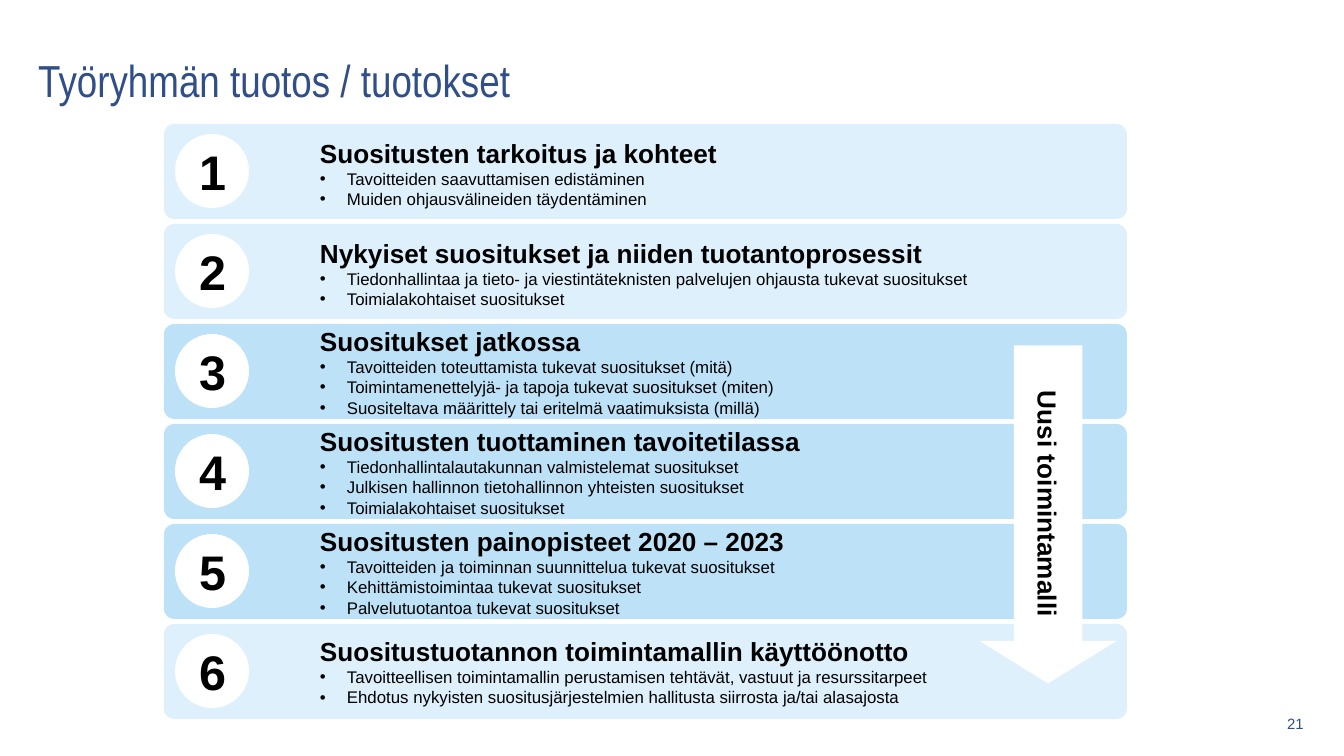
from lxml.etree import SubElement
from pptx import Presentation
from pptx.dml.color import RGBColor
from pptx.enum.shapes import MSO_SHAPE as Shape
from pptx.enum.text import MSO_ANCHOR as Anchor, PP_ALIGN as Align
from pptx.oxml.ns import qn
from pptx.util import Emu, Pt

SCALE = 914400 / 134.4  # EMU in one px
COLORS = {"title": "304E88", "text": "000000", "white": "FFFFFF",
          "pale": "DEF0FB", "strong": "BDE1F7"}
FORMATS = {
    "title": {"name": "Arial Narrow", "size": Pt(24), "bold": False},
    "page": {"name": "Arial", "size": Pt(8), "bold": False},
    "number": {"name": "Arial", "size": Pt(26), "bold": True},
    "heading": {"name": "Arial", "size": Pt(14), "bold": True},
    "bullet": {"name": "Arial", "size": Pt(9), "bold": False},
}


def px(*lengths):
    return [Emu(round(length * SCALE)) for length in lengths]


def write(paragraph, text, style, align=Align.LEFT, color="text"):
    paragraph.alignment = align
    run = paragraph.add_run()
    run.text = text
    for attribute, value in FORMATS[style].items():
        setattr(run.font, attribute, value)
    run.font.color.rgb = RGBColor.from_string(COLORS[color])


presentation = Presentation()
presentation.slide_width, presentation.slide_height = px(1344, 756)
slide = presentation.slides.add_slide(presentation.slide_layouts[6])

# Title and page number
for text, box, style, align in [
    ("Työryhmän tuotos / tuotokset", (25, 15, 1302, 130), "title", Align.LEFT),
    ("21", (1247, 708, 70, 32), "page", Align.RIGHT),
]:
    frame = slide.shapes.add_textbox(*px(*box)).text_frame
    frame.word_wrap = True
    frame.vertical_anchor = Anchor.MIDDLE
    write(frame.paragraphs[0], text, style, align, "title")

# Rows: fill, anchor, heading, bullets
rows = [
    ("pale", Anchor.TOP, "Suositusten tarkoitus ja kohteet", [
        "Tavoitteiden saavuttamisen edistäminen",
        "Muiden ohjausvälineiden täydentäminen"]),
    ("pale", Anchor.TOP, "Nykyiset suositukset ja niiden tuotantoprosessit", [
        "Tiedonhallintaa ja tieto- ja viestintäteknisten palvelujen ohjausta tukevat suositukset",
        "Toimialakohtaiset suositukset"]),
    ("strong", Anchor.MIDDLE, "Suositukset jatkossa", [
        "Tavoitteiden toteuttamista tukevat suositukset (mitä)",
        "Toimintamenettelyjä- ja tapoja tukevat suositukset (miten)",
        "Suositeltava määrittely tai eritelmä vaatimuksista (millä)"]),
    ("strong", Anchor.MIDDLE, "Suositusten tuottaminen tavoitetilassa", [
        "Tiedonhallintalautakunnan valmistelemat suositukset",
        "Julkisen hallinnon tietohallinnon yhteisten suositukset",
        "Toimialakohtaiset suositukset"]),
    ("strong", Anchor.MIDDLE, "Suositusten painopisteet 2020 – 2023", [
        "Tavoitteiden ja toiminnan suunnittelua tukevat suositukset",
        "Kehittämistoimintaa tukevat suositukset",
        "Palvelutuotantoa tukevat suositukset"]),
    ("pale", Anchor.MIDDLE, "Suositustuotannon toimintamallin käyttöönotto", [
        "Tavoitteellisen toimintamallin perustamisen tehtävät, vastuut ja resurssitarpeet",
        "Ehdotus nykyisten suositusjärjestelmien hallitusta siirrosta ja/tai alasajosta"]),
]
ROW_TOP, ROW_PITCH = 124, 100
indent, = px(27)

for index, (fill, anchor, heading, bullets) in enumerate(rows):
    top = ROW_TOP + index * ROW_PITCH

    # Bar with heading and bullets
    bar = slide.shapes.add_shape(Shape.ROUNDED_RECTANGLE, *px(164, top, 963, 95))
    bar.adjustments[0] = 0.11
    bar.shadow.inherit = False
    bar.fill.solid()
    bar.fill.fore_color.rgb = RGBColor.from_string(COLORS[fill])
    bar.line.fill.background()
    frame = bar.text_frame
    frame.word_wrap = True
    frame.vertical_anchor = anchor
    margin_top = 10 if anchor == Anchor.TOP else 7
    (frame.margin_left, frame.margin_top,
     frame.margin_right, frame.margin_bottom) = px(153, margin_top, 13, 7)
    write(frame.paragraphs[0], heading, "heading")
    for bullet in bullets:
        paragraph = frame.add_paragraph()
        properties = paragraph._p.get_or_add_pPr()
        properties.set("marL", str(indent))
        properties.set("indent", str(-indent))
        SubElement(properties, qn("a:buFont"), typeface="Arial")
        SubElement(properties, qn("a:buChar"), char="•")
        write(paragraph, bullet, "bullet")

    # Number circle
    circle = slide.shapes.add_shape(Shape.OVAL, *px(175, top + 10, 74, 74))
    circle.shadow.inherit = False
    circle.fill.solid()
    circle.fill.fore_color.rgb = RGBColor.from_string(COLORS["white"])
    circle.line.fill.background()
    circle.text_frame.vertical_anchor = Anchor.MIDDLE
    write(circle.text_frame.paragraphs[0], str(index + 1), "number", Align.CENTER)

# Downward arrow for the new operating model
arrow = slide.shapes.add_shape(Shape.RIGHT_ARROW, *px(879, 446, 338, 137))
arrow.rotation = 90
arrow.adjustments[0] = 0.5
arrow.adjustments[1] = 0.31
arrow.shadow.inherit = False
arrow.fill.solid()
arrow.fill.fore_color.rgb = RGBColor.from_string(COLORS["white"])
arrow.line.fill.background()
arrow.text_frame.vertical_anchor = Anchor.MIDDLE
write(arrow.text_frame.paragraphs[0], "Uusi toimintamalli", "heading", Align.CENTER)

presentation.save("out.pptx")
